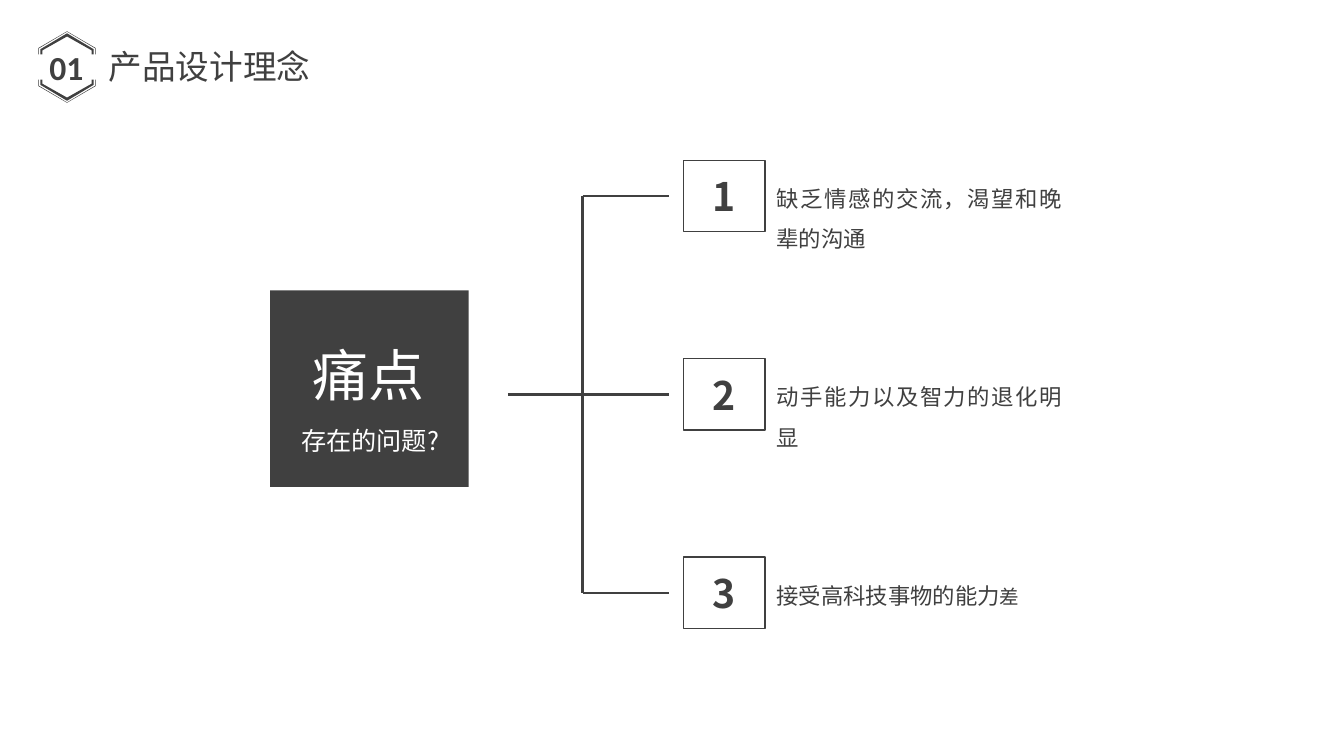
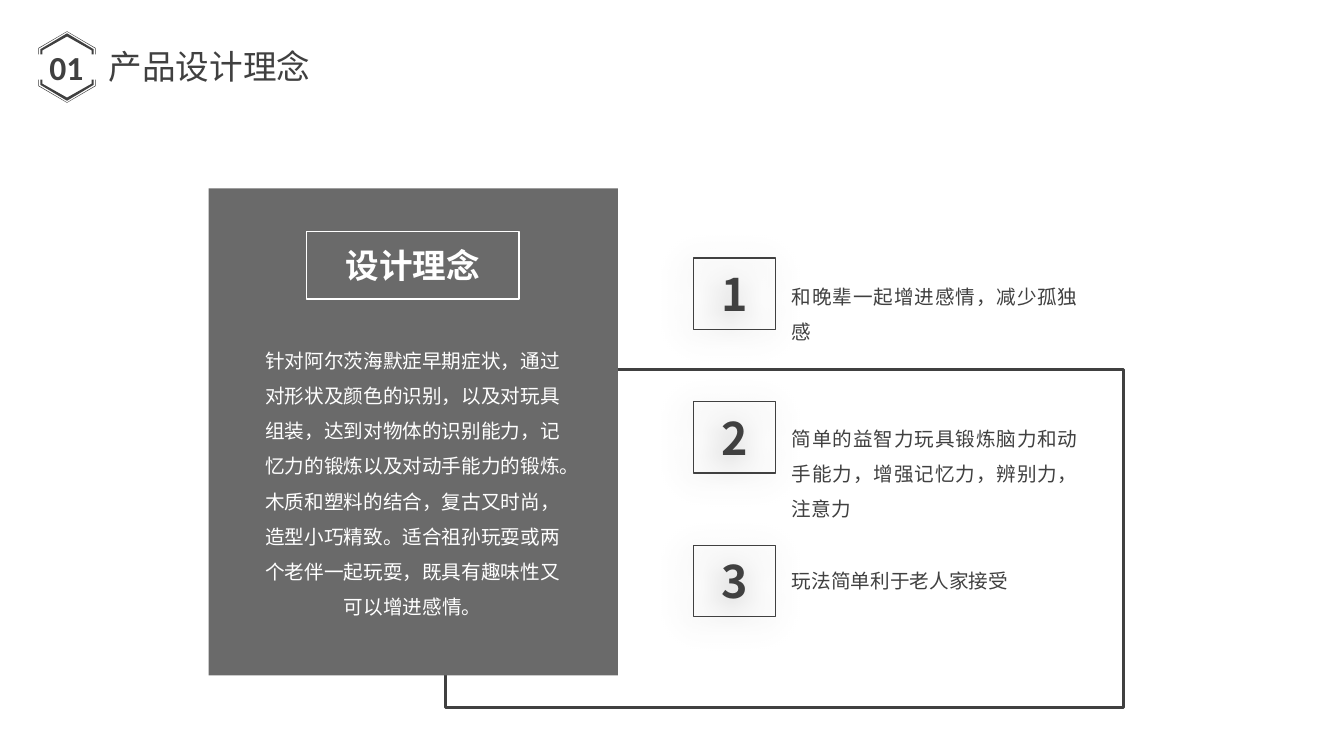
import lxml.etree
import pptx
import pptx.dml.color
import pptx.enum.shapes
import pptx.enum.text
import pptx.oxml.ns
import pptx.util

Cm = pptx.util.Cm
Pt = pptx.util.Pt
RGBColor = pptx.dml.color.RGBColor
ALIGN = pptx.enum.text.PP_ALIGN
ANCHOR = pptx.enum.text.MSO_ANCHOR
qn = pptx.oxml.ns.qn

DARK = RGBColor(0x40, 0x40, 0x40)
GRAY = RGBColor(0x6A, 0x6A, 0x6A)
WHITE = RGBColor(0xFF, 0xFF, 0xFF)
CJK_FONT = "Noto Sans CJK SC"
NUMBER_FONT = "Calibri"

BOX_WIDTH, BOX_HEIGHT = 2.06, 1.8


def add_run(paragraph, text, size, color, bold=False, font_name=CJK_FONT):
    run = paragraph.add_run()
    run.text = text
    run.font.size = Pt(size)
    run.font.bold = bold
    run.font.color.rgb = color
    run.font.name = font_name
    east_asian = lxml.etree.SubElement(run.font._element, qn("a:ea"))
    east_asian.set("typeface", font_name)


def add_text(slide, left, top, width, height, runs, color=DARK, align=ALIGN.LEFT,
             wrap=True, line_spacing=None):
    """Add a text box whose runs are (text, size) pairs."""
    shape = slide.shapes.add_textbox(Cm(left), Cm(top), Cm(width), Cm(height))
    frame = shape.text_frame
    frame.word_wrap = wrap
    frame.auto_size = pptx.enum.text.MSO_AUTO_SIZE.SHAPE_TO_FIT_TEXT
    paragraph = frame.paragraphs[0]
    paragraph.alignment = align
    if line_spacing:
        paragraph.line_spacing = line_spacing
    for text, size in runs:
        add_run(paragraph, text, size, color)


def add_box(slide, left, top, width, height, fill=None, line=None, line_width=1):
    shape = slide.shapes.add_shape(pptx.enum.shapes.MSO_SHAPE.RECTANGLE,
                                   Cm(left), Cm(top), Cm(width), Cm(height))
    shape.shadow.inherit = False
    if fill is None:
        shape.fill.background()
    else:
        shape.fill.solid()
        shape.fill.fore_color.rgb = fill
    if line is None:
        shape.line.fill.background()
    else:
        shape.line.color.rgb = line
        shape.line.width = Pt(line_width)
    return shape


def add_label(shape, text, size, color):
    """Write bold centred text in a shape."""
    shape.text_frame.vertical_anchor = ANCHOR.MIDDLE
    paragraph = shape.text_frame.paragraphs[0]
    paragraph.alignment = ALIGN.CENTER
    add_run(paragraph, text, size, color, bold=True)


def add_soft_shadow(shape):
    effects = shape._element.spPr.find(qn("a:effectLst"))
    shadow = lxml.etree.SubElement(effects, qn("a:outerShdw"), blurRad=str(Pt(23)),
                                   dist=str(Pt(5)), dir=str(135 * 60000),
                                   algn="tr", rotWithShape="0")
    color = lxml.etree.SubElement(shadow, qn("a:srgbClr"), val="000000")
    lxml.etree.SubElement(color, qn("a:alpha"), val="40000")


def add_line(slide, start_x, start_y, end_x, end_y):
    connector = slide.shapes.add_connector(pptx.enum.shapes.MSO_CONNECTOR.STRAIGHT,
                                           Cm(start_x), Cm(start_y), Cm(end_x), Cm(end_y))
    connector.line.color.rgb = DARK
    connector.line.width = Pt(1.75)
    lxml.etree.SubElement(connector._element.spPr, qn("a:effectLst"))


def add_chevron_band(slide, direction, outer, inner):
    """Draw half of a hexagon ring; edges are (half width, apex, shoulder)."""
    center, end = 1.69, 0.32

    def edge(half_width, apex, shoulder):
        offsets = [(-half_width, end), (-half_width, shoulder), (0, apex),
                   (half_width, shoulder), (half_width, end)]
        return [(Cm(center + x), Cm(center + direction * y)) for x, y in offsets]

    points = edge(*outer) + edge(*inner)[::-1]
    builder = slide.shapes.build_freeform(*points[0])
    builder.add_line_segments(points[1:], close=True)
    shape = builder.convert_to_shape()
    shape.shadow.inherit = False
    shape.fill.solid()
    shape.fill.fore_color.rgb = DARK
    shape.line.fill.background()


def add_header(slide, number, title):
    add_text(slide, 2.49, 1.04, 5.64, 1.27, [(title, 24)], wrap=False)
    badge = slide.shapes.add_textbox(Cm(0.71), Cm(0.94), Cm(1.93), Cm(1.52))
    badge.text_frame.word_wrap = True
    badge.text_frame.vertical_anchor = ANCHOR.MIDDLE
    paragraph = badge.text_frame.paragraphs[0]
    paragraph.alignment = ALIGN.CENTER
    add_run(paragraph, number, 24, DARK, bold=True, font_name=NUMBER_FONT)
    for direction in (-1, 1):
        add_chevron_band(slide, direction, (0.72, 0.9, 0.48), (0.71, 0.89, 0.47))
        add_chevron_band(slide, direction, (0.67, 0.85, 0.45), (0.62, 0.77, 0.42))


def add_numbered_items(slide, items, left, top, pitch, number_size, text_left, text_top,
                       text_pitch, fill=None, soft_shadow=False):
    """Stack numbered boxes; each item is (text height, runs)."""
    for index, (text_height, runs) in enumerate(items):
        box = add_box(slide, left, top + index * pitch, BOX_WIDTH, BOX_HEIGHT, fill, DARK)
        add_label(box, str(index + 1), number_size, DARK)
        if soft_shadow:
            add_soft_shadow(box)
        add_text(slide, text_left, text_top + index * text_pitch, 7.7, text_height, runs,
                 align=ALIGN.JUSTIFY, line_spacing=1.5)


def build_pain_points(slide):
    top, pitch = 4.04, 5
    branches = [top + BOX_HEIGHT / 2 + index * pitch for index in range(3)]
    trunk_x, branch_end = 14.68, 16.87
    add_line(slide, trunk_x, branches[0], trunk_x, branches[-1])
    for start_x, branch_y in zip((trunk_x, 12.8, trunk_x), branches):
        add_line(slide, start_x, branch_y, branch_end, branch_y)
    items = [
        (2.18, [("缺乏情感的交流，渴望和晚辈的沟通", 16)]),
        (2.18, [("动手能力以及智力的退化明显", 16)]),
        (1.17, [("接受高科技事物的能力", 16), ("差", 14)]),
    ]
    add_numbered_items(slide, items, 17.22, top, pitch, 28, 19.32, 4.2, pitch, fill=WHITE)
    add_box(slide, 6.81, 7.32, 5, 4.95, fill=DARK)
    add_text(slide, 7.32, 10.59, 4.01, 1.02, [("存在的问题?", 18)], WHITE,
             ALIGN.CENTER, wrap=False)
    add_text(slide, 7.62, 8.46, 3.35, 1.96, [("痛点", 40)], WHITE, wrap=False)


def build_design_concept(slide):
    add_box(slide, 11.23, 9.32, 17.09, 8.51, line=DARK, line_width=2)
    add_box(slide, 5.26, 4.75, 10.31, 12.27, fill=GRAY)
    concept = ("针对阿尔茨海默症早期症状，通过对形状及颜色的识别，以及对玩具组装，"
               "达到对物体的识别能力，记忆力的锻炼以及对动手能力的锻炼。"
               "木质和塑料的结合，复古又时尚，造型小巧精致。"
               "适合祖孙玩耍或两个老伴一起玩耍，既具有趣味性又可以增进感情。")
    add_text(slide, 6.35, 8.36, 8.1, 7.34, [(concept, 14)], WHITE, ALIGN.CENTER,
             line_spacing=1.5)
    heading = add_box(slide, 7.72, 5.84, 5.36, 1.7, line=WHITE)
    add_label(heading, "设计理念", 24, WHITE)
    items = [
        (1.96, [("和晚辈一起增进感情，减少孤独感", 14)]),
        (2.84, [("简单的益智力玩具锻炼脑力和动手能力，增强记忆力，辨别力，注意力", 14)]),
        (1.04, [("玩法简单利于老人家接受", 14)]),
    ]
    add_numbered_items(slide, items, 17.48, 6.5, 3.62, 32, 19.71, 6.75, 3.58,
                       soft_shadow=True)


def main():
    presentation = pptx.Presentation()
    presentation.slide_width = Cm(33.87)
    presentation.slide_height = Cm(19.05)
    blank_layout = presentation.slide_layouts[6]
    for build in (build_pain_points, build_design_concept):
        slide = presentation.slides.add_slide(blank_layout)
        build(slide)
        add_header(slide, "01", "产品设计理念")
    presentation.save("out.pptx")


if __name__ == "__main__":
    main()
